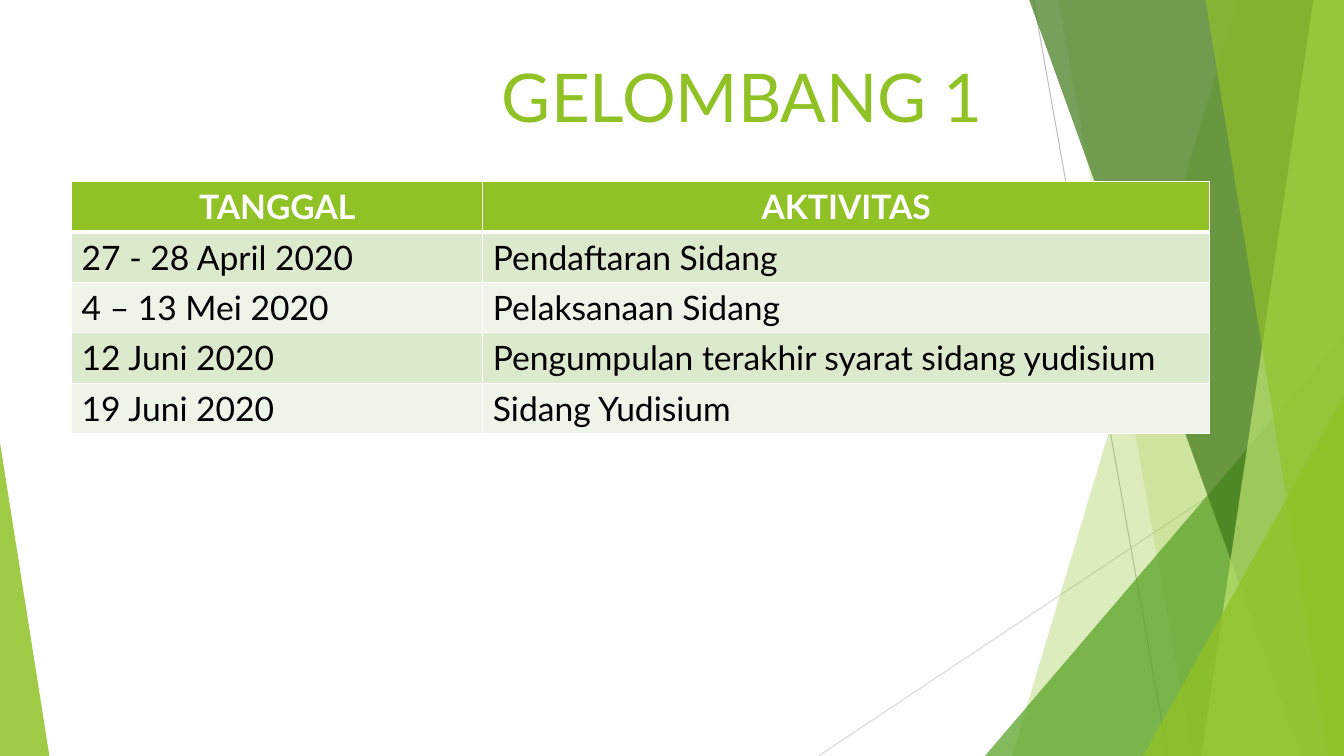
"""Build the slide with the schedule of the first wave."""
import pptx
import pptx.dml.color
import pptx.enum.shapes
import pptx.enum.text
import pptx.oxml
import pptx.oxml.ns
import pptx.util

WIDE, HIGH = pptx.util.Inches(13.333), pptx.util.Inches(7.5)
FONT, GREEN, WHITE, BLACK = "Lato", "90C226", "FFFFFF", "000000"
TITLE = "GELOMBANG 1"
ROWS = [
    ("TANGGAL", "AKTIVITAS"),
    ("27 - 28 April 2020", "Pendaftaran Sidang"),
    ("4 – 13 Mei 2020", "Pelaksanaan Sidang"),
    ("12 Juni 2020", "Pengumpulan terakhir syarat sidang yudisium"),
    ("19 Juni 2020", "Sidang Yudisium"),
]
BANDS = ["EEF4E8", "DBE9CD"]
TITLE_BOX = (36.6, 6.67, 41.55, 8.93)
TABLE_BOX = (5.33, 24, 84.68, 33.33)
COLS = (30.6, 54.08)
LINES = [((76.9, 0, 86.9, 100), "BFBFBF"), ((100, 53.73, 60.9, 100), "D9D9D9")]
FACETS = [
    ("blade", (92.1, 75.3), GREEN, 30),
    ("blade", (78.75, 88.73), GREEN, 20),
    ("wedge", (73.28, 44.4, 26.72, 1), "54A021", 72),
    ("blade", (76.58, 96.83), "3F7819", 70),
    ("blade", (97.73, 89.4), "C0E474", 70),
    ("blade", (89.7, 98.85), GREEN, 65),
    ("wedge", (85.05, 52.4, 14.95, 1), GREEN, 80),
    ("wedge", (0, 58.53, 3.68, 0), GREEN, 85),
]
SPACE = 'xmlns:a="http://schemas.openxmlformats.org/drawingml/2006/main"'


def tint(hue):
    """Turn a hex string into a colour."""
    return pptx.dml.color.RGBColor.from_string(hue)


def place(*parts):
    """Turn percent shares, across and down in turn, into lengths."""
    return [round(part * (HIGH if i % 2 else WIDE) / 100) for i, part in enumerate(parts)]


def style(para, **form):
    """Set font values of a paragraph."""
    para.font.color.rgb = tint(form.pop("hue"))
    for key, value in {"name": FONT, **form}.items():
        setattr(para.font, key, value)


def line(slide, ends, hue):
    """Draw one thin line."""
    rule = slide.shapes.add_connector(pptx.enum.shapes.MSO_CONNECTOR.STRAIGHT, *place(*ends))
    rule.line.color.rgb = tint(hue)
    rule.line.width = pptx.util.Pt(0.75)
    rule._element.spPr.append(pptx.oxml.parse_xml(f"<a:effectLst {SPACE}/>"))


def blade(slide, top, foot):
    """Draw a slanted panel that reaches the right edge."""
    start, *rest = [place(*spot) for spot in ((top, 0), (100, 0), (100, 100), (foot, 100))]
    form = slide.shapes.build_freeform(*start)
    form.add_line_segments(rest)
    return form.convert_to_shape()


def wedge(slide, left, top, width, tip):
    """Draw a triangle that stands on the bottom edge."""
    kind = pptx.enum.shapes.MSO_SHAPE.ISOSCELES_TRIANGLE
    shape = slide.shapes.add_shape(kind, *place(left, top, width, 100 - top))
    shape.adjustments[0] = tip
    return shape


def facet(slide, kind, form, hue, share):
    """Draw one see-through green shape."""
    shape = {"blade": blade, "wedge": wedge}[kind](slide, *form)
    shape.shadow.inherit = False
    shape.line.fill.background()
    shape.fill.solid()
    shape.fill.fore_color.rgb = tint(hue)
    color = shape._element.spPr.find(".//" + pptx.oxml.ns.qn("a:srgbClr"))
    color.append(pptx.oxml.parse_xml(f'<a:alpha {SPACE} val="{share * 1000}"/>'))


def head(slide):
    """Fill the title and bring it to the front."""
    title = slide.shapes.title
    title.left, title.top, title.width, title.height = place(*TITLE_BOX)
    frame = title.text_frame
    frame.text = TITLE
    frame.word_wrap = True
    frame.auto_size = pptx.enum.text.MSO_AUTO_SIZE.NONE
    frame.vertical_anchor = pptx.enum.text.MSO_ANCHOR.TOP
    para = frame.paragraphs[0]
    para.alignment = pptx.enum.text.PP_ALIGN.LEFT
    style(para, hue=GREEN, size=pptx.util.Pt(48))
    slide.shapes._spTree.append(title._element)


def edge(cell, thick):
    """Draw white borders, the lowest with its own weight."""
    props = cell._tc.get_or_add_tcPr()
    for i, side in enumerate("LRTB"):
        width = pptx.util.Pt(thick if side == "B" else 1)
        props.insert(i, pptx.oxml.parse_xml(
            f'<a:ln{side} {SPACE} w="{width}"><a:solidFill>'
            f'<a:srgbClr val="{WHITE}"/></a:solidFill></a:ln{side}>'))


def grid(slide):
    """Build the schedule table."""
    table = slide.shapes.add_table(len(ROWS), len(COLS), *place(*TABLE_BOX)).table
    for col, share in zip(table.columns, COLS):
        col.width = place(share)[0]
    for i, row in enumerate(ROWS):
        top = i == 0
        for j, text in enumerate(row):
            cell = table.cell(i, j)
            cell.text = text
            cell.fill.solid()
            cell.fill.fore_color.rgb = tint(GREEN if top else BANDS[i % 2])
            edge(cell, 3 if top or i == 0 else 1)
            para = cell.text_frame.paragraphs[0]
            align = pptx.enum.text.PP_ALIGN
            para.alignment = align.CENTER if top else align.LEFT
            style(para, hue=WHITE if top else BLACK, size=pptx.util.Pt(24), bold=top)


def main():
    """Put the slide together and save it."""
    deck = pptx.Presentation()
    deck.slide_width, deck.slide_height = WIDE, HIGH
    slide = deck.slides.add_slide(deck.slide_layouts[5])
    for ends, hue in LINES:
        line(slide, ends, hue)
    for item in FACETS:
        facet(slide, *item)
    head(slide)
    grid(slide)
    deck.save("out.pptx")


if __name__ == "__main__":
    main()
